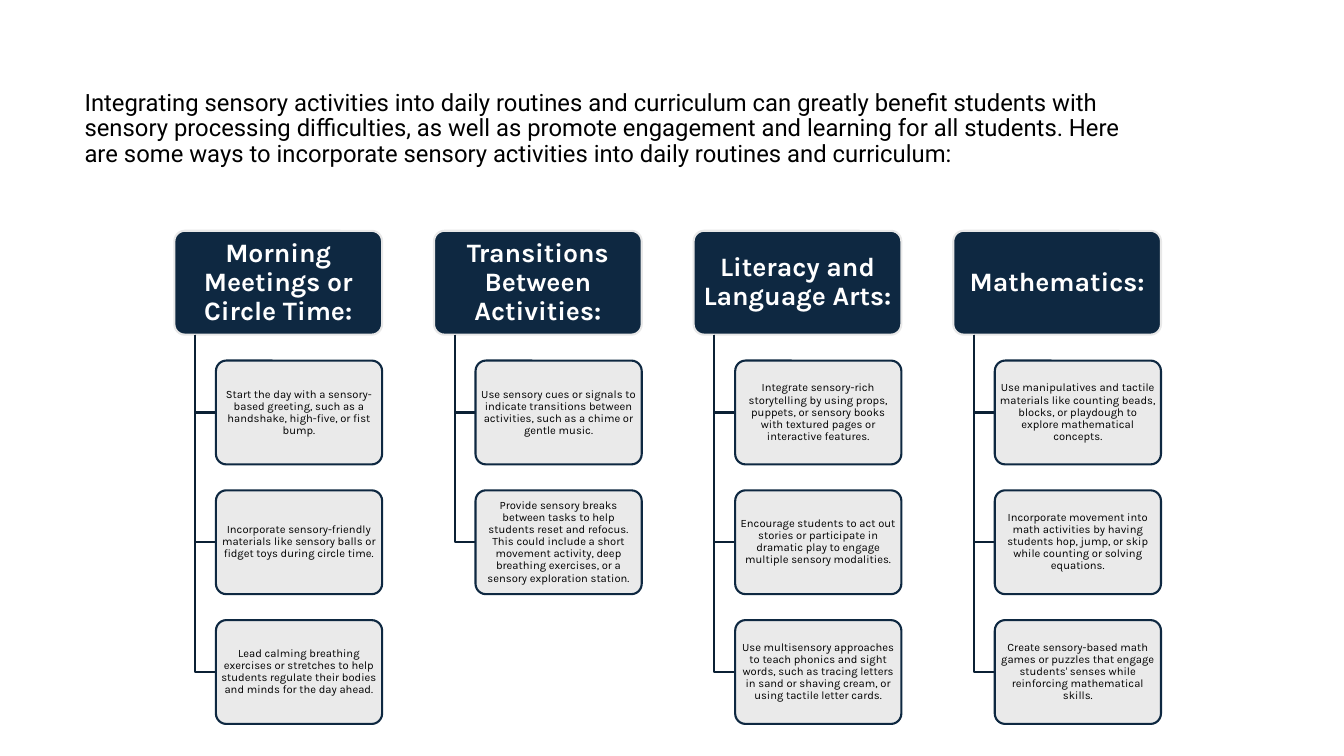
from lxml.etree import SubElement
from pptx import Presentation
from pptx.dml.color import RGBColor
from pptx.enum.shapes import MSO_SHAPE
from pptx.enum.text import MSO_ANCHOR, PP_ALIGN
from pptx.oxml.ns import qn
from pptx.util import Inches, Pt

COLORS = {"navy": "0E2841", "branch": "0B2034", "gray": "E8E8E8",
          "white": "FFFFFF", "black": "000000"}

LEFT, TOP = 1.73, 2.29
BOX_W, BOX_H = 2.06, 1.03
COL_STEP, ROW_STEP = 1.25 * BOX_W, 1.25 * BOX_H
TRUNK, INDENT = 0.1 * BOX_W, 0.2 * BOX_W

INTRO = ("Integrating sensory activities into daily routines and curriculum can "
         "greatly benefit students with sensory processing difficulties, as well as "
         "promote engagement and learning for all students. Here are some ways to "
         "incorporate sensory activities into daily routines and curriculum:")

ACTIVITIES = {
    "Morning Meetings or Circle Time:": [
        "Start the day with a sensory-based greeting, such as a handshake, "
        "high-five, or fist bump.",
        "Incorporate sensory-friendly materials like sensory balls or fidget toys "
        "during circle time.",
        "Lead calming breathing exercises or stretches to help students regulate "
        "their bodies and minds for the day ahead.",
    ],
    "Transitions Between Activities:": [
        "Use sensory cues or signals to indicate transitions between activities, "
        "such as a chime or gentle music.",
        "Provide sensory breaks between tasks to help students reset and refocus. "
        "This could include a short movement activity, deep breathing exercises, "
        "or a sensory exploration station.",
    ],
    "Literacy and Language Arts:": [
        "Integrate sensory-rich storytelling by using props, puppets, or sensory "
        "books with textured pages or interactive features.",
        "Encourage students to act out stories or participate in dramatic play to "
        "engage multiple sensory modalities.",
        "Use multisensory approaches to teach phonics and sight words, such as "
        "tracing letters in sand or shaving cream, or using tactile letter cards.",
    ],
    "Mathematics:": [
        "Use manipulatives and tactile materials like counting beads, blocks, or "
        "playdough to explore mathematical concepts.",
        "Incorporate movement into math activities by having students hop, jump, "
        "or skip while counting or solving equations.",
        "Create sensory-based math games or puzzles that engage students' senses "
        "while reinforcing mathematical skills.",
    ],
}


def rgb(name):
    return RGBColor.from_string(COLORS[name])


def set_text(sp, text, font, size, color, margins, align=PP_ALIGN.CENTER,
             anchor=MSO_ANCHOR.MIDDLE, bold=False):
    """Fill a shape with one paragraph; margins are horizontal and vertical inches."""
    tf = sp.text_frame
    tf.word_wrap = True
    tf.vertical_anchor = anchor
    tf.margin_left = tf.margin_right = Inches(margins[0])
    tf.margin_top = tf.margin_bottom = Inches(margins[1])
    p = tf.paragraphs[0]
    p.text = text
    p.alignment = align
    p.line_spacing = 0.9
    p.font.name, p.font.size, p.font.bold = font, Pt(size), bold
    p.font.color.rgb = rgb(color)


def set_line(sp, color):
    sp.shadow.inherit = False
    sp.line.color.rgb = rgb(color)
    sp.line.width = Pt(1.5)


def add_box(s, x, y, width, fill, line):
    sp = s.shapes.add_shape(MSO_SHAPE.ROUNDED_RECTANGLE, Inches(x), Inches(y),
                            Inches(width), Inches(BOX_H))
    sp.adjustments[0] = 0.1
    sp.fill.solid()
    sp.fill.fore_color.rgb = rgb(fill)
    set_line(sp, line)
    return sp


def add_heading(s, x, text):
    sp = add_box(s, x, TOP, BOX_W, "navy", "gray")
    set_text(sp, text, "Karla", 19, "white", (0.04, 0.03), bold=True)


def add_branch(s, x, y):
    """Draw the elbow from under a heading to the left side of the box at y."""
    middle = Inches(y + BOX_H / 2)
    trunk = Inches(x + TRUNK)
    builder = s.shapes.build_freeform(trunk, Inches(TOP + BOX_H))
    builder.add_line_segments([(trunk, middle), (Inches(x + INDENT), middle)],
                              close=False)
    sp = builder.convert_to_shape()
    sp.fill.background()
    set_line(sp, "branch")


def add_activity(s, x, y, text):
    sp = add_box(s, x + INDENT, y, BOX_W - INDENT, "gray", "navy")
    color = sp.fill._xPr.find(qn("a:solidFill"))[0]
    SubElement(color, qn("a:alpha"), val="90000")
    set_text(sp, text, "Karla", 8, "black", (0.02, 0.01))


def main():
    prs = Presentation()
    prs.slide_width, prs.slide_height = Inches(13.33), Inches(7.5)
    s = prs.slides.add_slide(prs.slide_layouts[6])

    intro = s.shapes.add_textbox(Inches(0.74), Inches(0.82),
                                 Inches(10.51), Inches(1.18))
    set_text(intro, INTRO, "Roboto", 17, "black", (0.1, 0.08),
             align=PP_ALIGN.LEFT, anchor=MSO_ANCHOR.TOP)

    for col, (heading, activities) in enumerate(ACTIVITIES.items()):
        x = LEFT + col * COL_STEP
        add_heading(s, x, heading)
        for row, activity in enumerate(activities, start=1):
            y = TOP + row * ROW_STEP
            add_branch(s, x, y)
            add_activity(s, x, y, activity)

    prs.save("out.pptx")


if __name__ == "__main__":
    main()
